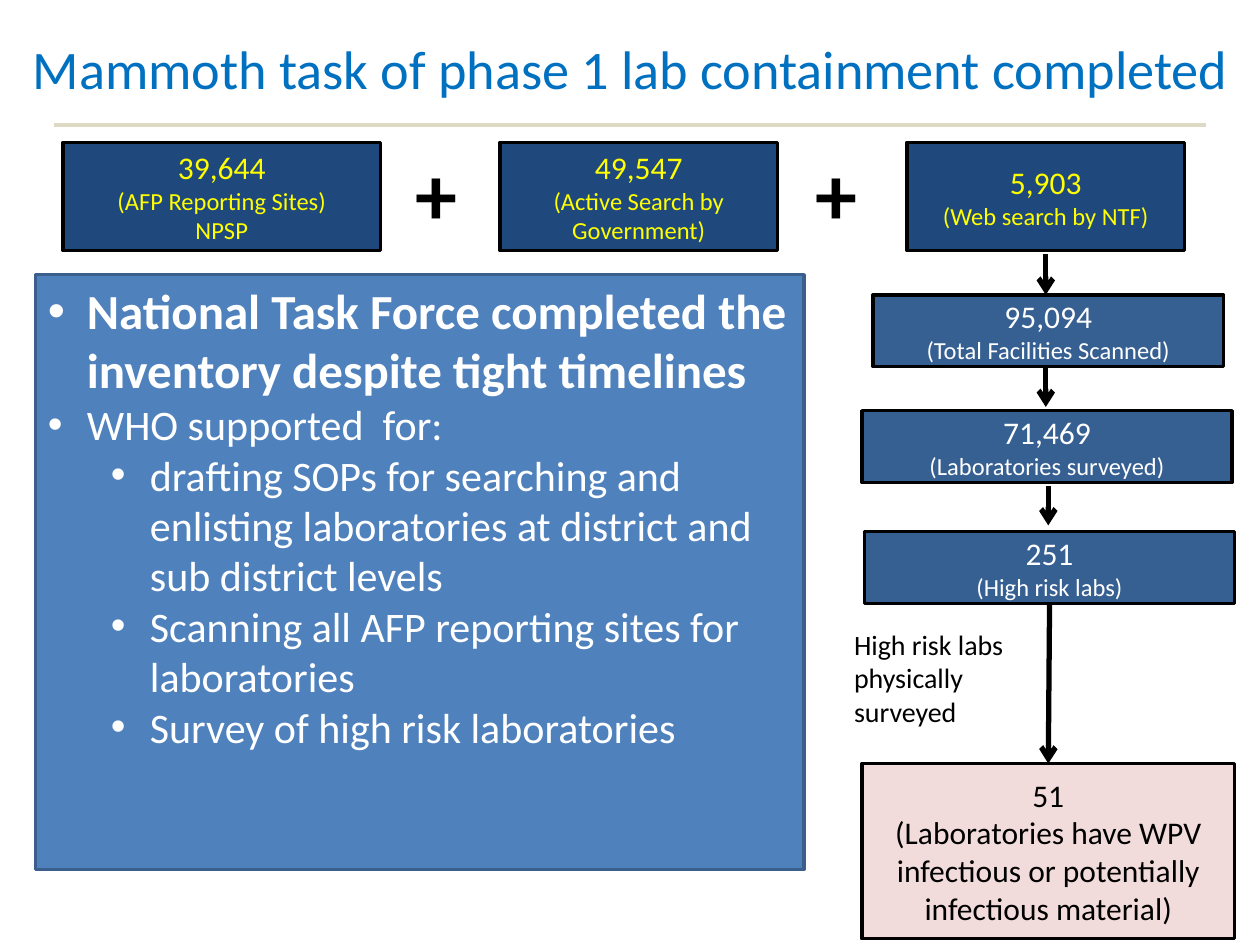
from dataclasses import dataclass

from lxml.etree import SubElement
from pptx import Presentation
from pptx.dml.color import RGBColor
from pptx.enum.shapes import MSO_CONNECTOR as Connector, MSO_SHAPE as Shape
from pptx.enum.text import MSO_ANCHOR as Anchor, MSO_AUTO_SIZE as AutoSize, PP_ALIGN as Align
from pptx.oxml.ns import qn
from pptx.slide import Slide
from pptx.util import Inches, Pt

BLACK = RGBColor(0x00, 0x00, 0x00)
WHITE = RGBColor(0xFF, 0xFF, 0xFF)
YELLOW = RGBColor(0xFF, 0xFF, 0x00)
TITLE_BLUE = RGBColor(0x00, 0x70, 0xC0)
NAVY = RGBColor(0x1F, 0x49, 0x7D)
STEEL = RGBColor(0x37, 0x60, 0x92)
PANEL_BLUE = RGBColor(0x4F, 0x81, 0xBD)
PANEL_EDGE = RGBColor(0x3A, 0x5F, 0x8C)
PINK = RGBColor(0xF2, 0xDC, 0xDB)
SAND = RGBColor(0xDD, 0xD9, 0xC3)


@dataclass
class SlideBuilder:
    slide: Slide
    font: str = "Calibri"

    def place(self, shape, left, top, width, height):
        shape.left, shape.top = Inches(left), Inches(top)
        shape.width, shape.height = Inches(width), Inches(height)

    def paint(self, shape, fill, edge):
        shape.fill.solid()
        shape.fill.fore_color.rgb = fill
        shape.line.color.rgb = edge
        shape.line.width = Pt(2)

    def add_lines(self, frame, lines, color, align=Align.LEFT):
        frame.word_wrap = True
        for index, (text, size, bold) in enumerate(lines):
            para = frame.paragraphs[0] if index == 0 else frame.add_paragraph()
            para.alignment = align
            span = para.add_run()
            span.text = text
            span.font.name = self.font
            span.font.size = Pt(size)
            span.font.bold = bold
            span.font.color.rgb = color

    def title(self, text, *bounds):
        box = self.slide.shapes.title
        self.place(box, *bounds)
        self.add_lines(box.text_frame, [(text, 31, False)], TITLE_BLUE, Align.CENTER)
        box.text_frame.auto_size = AutoSize.NONE
        box.text_frame.vertical_anchor = Anchor.MIDDLE

    def bullets(self, items, *bounds):
        box = self.slide.placeholders[1]
        self.place(box, *bounds)
        self.paint(box, PANEL_BLUE, PANEL_EDGE)
        frame = box.text_frame
        self.add_lines(frame, [item[1:] for item in items], WHITE)
        frame.auto_size = AutoSize.NONE
        frame.vertical_anchor = Anchor.TOP
        for para, (level, *_) in zip(frame.paragraphs, items):
            para.level = level
            para.space_before = Pt(0)
            properties = para._p.get_or_add_pPr()
            properties.set("marL", str(Inches(0.31 + 0.5 * level)))
            properties.set("indent", str(Inches(-0.31)))
            SubElement(properties, qn("a:buFont"), typeface="Arial")
            SubElement(properties, qn("a:buChar"), char="•")

    def box(self, number, labels, fill, color, *bounds, label_size=14):
        box = self.slide.shapes.add_shape(Shape.RECTANGLE, *map(Inches, bounds))
        box.shadow.inherit = False
        self.paint(box, fill, BLACK)
        box.text_frame.vertical_anchor = Anchor.MIDDLE
        lines = [(number, 18, False)] + [(label, label_size, False) for label in labels]
        self.add_lines(box.text_frame, lines, color, Align.CENTER)

    def label(self, text, size, bold, wrap, *bounds):
        box = self.slide.shapes.add_textbox(*map(Inches, bounds))
        self.add_lines(box.text_frame, [(text, size, bold)], BLACK)
        box.text_frame.word_wrap = wrap
        box.text_frame.auto_size = AutoSize.SHAPE_TO_FIT_TEXT

    def line(self, color, width, *ends, arrow=False):
        line = self.slide.shapes.add_connector(Connector.STRAIGHT, *map(Inches, ends))
        line.line.color.rgb = color
        line.line.width = Pt(width)
        if arrow:
            SubElement(line.line._get_or_add_ln(), qn("a:tailEnd"), type="arrow")
        SubElement(line._element.spPr, qn("a:effectLst"))


def main():
    deck = Presentation()
    deck.slide_width, deck.slide_height = Inches(10), Inches(7.5)
    page = SlideBuilder(deck.slides.add_slide(deck.slide_layouts[1]))

    page.title("Mammoth task of phase 1 lab containment completed", 0, 0.01, 10, 1.06)
    page.line(SAND, 2.25, 0.43, 0.99, 9.57, 0.99)

    sources = [
        ("39,644", ["(AFP Reporting Sites)", "NPSP"], 0.5, 2.52),
        ("49,547", ["(Active Search by Government)"], 3.97, 2.2),
        ("5,903", ["(Web search by NTF)"], 7.2, 2.2),
    ]
    for number, labels, left, width in sources:
        page.box(number, labels, NAVY, YELLOW, left, 1.13, width, 0.86)
    for left in (3.2, 6.37):
        page.label("+", 48, True, False, left, 1.07, 0.59, 0.91)

    stages = [
        ("95,094", "(Total Facilities Scanned)", 6.93, 2.34, 2.78),
        ("71,469", "(Laboratories surveyed)", 6.84, 3.26, 2.94),
        ("251", "(High risk labs)", 6.86, 4.22, 2.94),
    ]
    for number, label, left, top, width in stages:
        page.box(number, [label], STEEL, WHITE, left, top, width, 0.57)
    page.box("51", ["(Laboratories have WPV infectious or potentially infectious material)"],
             PINK, BLACK, 6.84, 6.06, 2.96, 1.39, label_size=18)

    arrows = [
        (8.3, 2.02, 8.3, 2.34),
        (8.3, 2.91, 8.3, 3.23),
        (8.32, 3.86, 8.32, 4.17),
        (8.33, 4.79, 8.32, 6.06),
    ]
    for ends in arrows:
        page.line(BLACK, 3, *ends, arrow=True)
    page.label("High risk labs physically surveyed", 16, False, True, 6.68, 4.93, 1.63, 0.91)

    page.bullets([
        (0, "National Task Force completed the inventory despite tight timelines", 28, True),
        (0, "WHO supported  for:", 24, False),
        (1, "drafting SOPs for searching and enlisting laboratories at district and "
            "sub district levels", 24, False),
        (1, "Scanning all AFP reporting sites for laboratories", 24, False),
        (1, "Survey of high risk laboratories", 24, False),
    ], 0.28, 2.18, 6.1, 4.72)

    deck.save("out.pptx")


if __name__ == "__main__":
    main()
